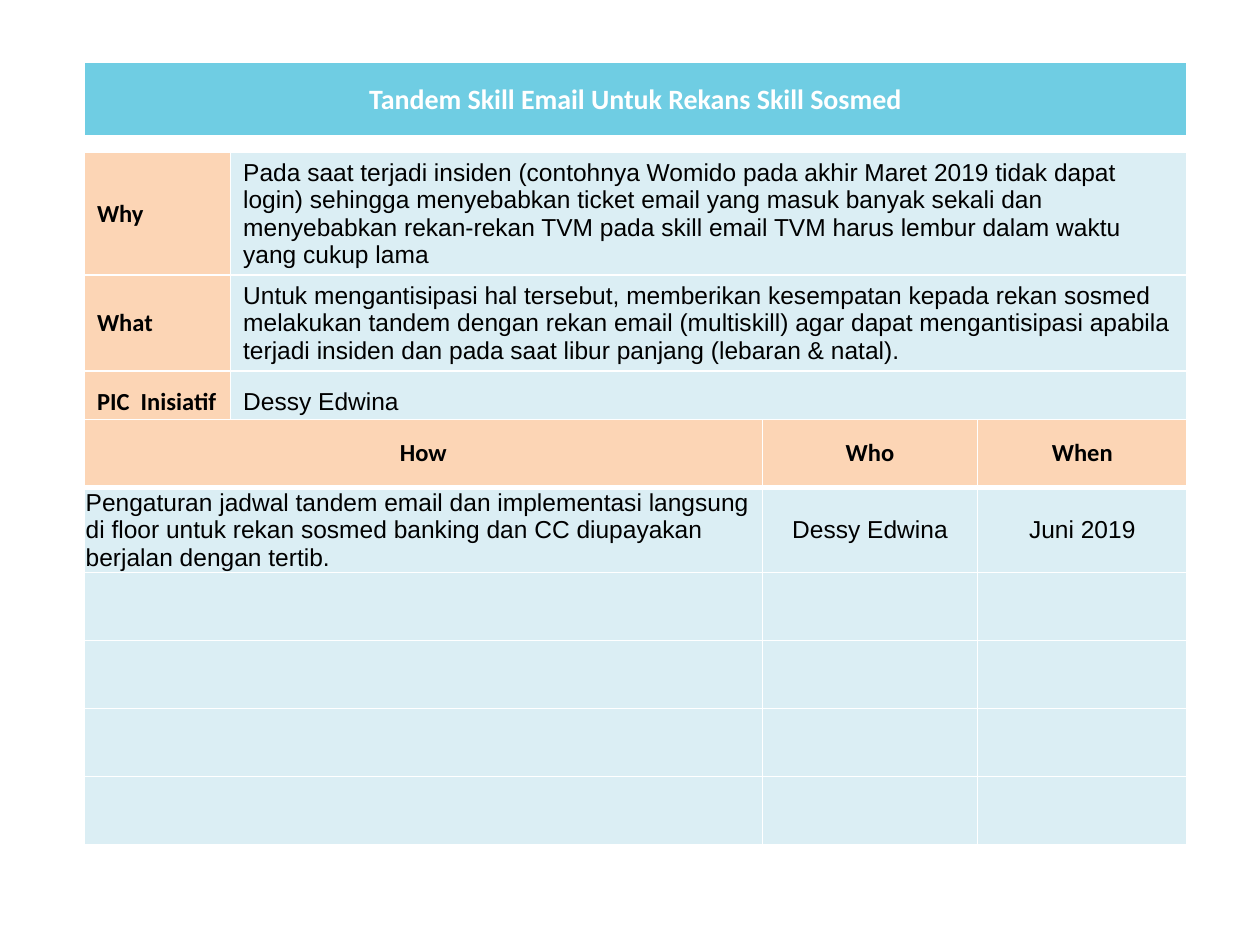
import pptx
import pptx.util
import pptx.dml.color
import pptx.enum.text
import pptx.oxml.ns
from lxml import etree

INCH = pptx.util.Inches
ALIGN = pptx.enum.text.PP_ALIGN
LEFT, WIDTH = 0.67, 8.75
CYAN, PEACH, PALE, WHITE = "6FCDE3", "FCD5B5", "DBEEF4", "FFFFFF"
HEAD = dict(font="Calibri", bold=True)
MID = dict(align=ALIGN.CENTER)


def color(code):
    return pptx.dml.color.RGBColor.from_string(code)


def child(parent, tag, **attrs):
    return etree.SubElement(parent, pptx.oxml.ns.qn(tag), **attrs)


def border(cell, base=1):
    """Draw white cell sides; base is the bottom width in points."""
    props = cell._tc.get_or_add_tcPr()
    for side, width in (("L", 1), ("R", 1), ("T", 1), ("B", base)):
        line = child(props, f"a:ln{side}", w=str(pptx.util.Pt(width)))
        child(child(line, "a:solidFill"), "a:srgbClr", val=WHITE)


def write(cell, text, size=14, font="Arial", bold=False, ink="000000",
          align=ALIGN.LEFT, inset=None):
    cell.vertical_anchor = pptx.enum.text.MSO_ANCHOR.MIDDLE
    if inset is not None:
        cell.margin_left = cell.margin_right = INCH(inset)
        cell.margin_top = cell.margin_bottom = INCH(inset)
    para = cell.text_frame.paragraphs[0]
    para.alignment = align
    if not text:
        child(para._p, "a:endParaRPr", sz=str(size * 100))
        return
    run = para.add_run()
    run.text = text
    run.font.size = pptx.util.Pt(size)
    run.font.name = font
    run.font.bold = bold
    run.font.color.rgb = color(ink)


def paint(cell, fill, text="", base=1, **style):
    border(cell, base)
    cell.fill.solid()
    cell.fill.fore_color.rgb = color(fill)
    write(cell, text, **style)


def grid(slide, top, cols, rows):
    frame = slide.shapes.add_table(len(rows), len(cols), INCH(LEFT), INCH(top),
                                   INCH(WIDTH), INCH(sum(rows)))
    table = frame.table
    table.first_row = table.horz_banding = False
    for col, width in zip(table.columns, cols):
        col.width = INCH(width)
    for row, height in zip(table.rows, rows):
        row.height = INCH(height)
    return table


def brief(slide):
    table = grid(slide, 0.49, (1.16, WIDTH - 1.16), (0.6, 0.12, 0.97, 0.76, 0.5))
    table.cell(0, 0).merge(table.cell(0, 1))
    paint(table.cell(0, 0), CYAN, "Tandem Skill Email Untuk Rekans Skill Sosmed",
          base=3, size=16, ink=WHITE, **HEAD, **MID)
    for col in range(2):
        paint(table.cell(1, col), WHITE, size=1, inset=0)
    facts = (
        ("Why", "Pada saat terjadi insiden (contohnya Womido pada akhir Maret 2019 "
                "tidak dapat login) sehingga menyebabkan ticket email yang masuk banyak "
                "sekali dan menyebabkan rekan-rekan TVM pada skill email TVM harus "
                "lembur dalam waktu yang cukup lama"),
        ("What", "Untuk mengantisipasi hal tersebut, memberikan kesempatan kepada rekan "
                 "sosmed melakukan tandem dengan rekan email (multiskill) agar dapat "
                 "mengantisipasi apabila terjadi insiden dan pada saat libur panjang "
                 "(lebaran & natal)."),
        ("PIC  Inisiatif", "Dessy Edwina"),
    )
    for row, (label, text) in enumerate(facts, 2):
        paint(table.cell(row, 0), PEACH, label, **HEAD)
        paint(table.cell(row, 1), PALE, text)


def plan(slide):
    table = grid(slide, 3.33, (5.38, 1.71, 1.66), (0.54, 0.66) + (0.54,) * 4)
    for col, label in enumerate(("How", "Who", "When")):
        paint(table.cell(0, col), PEACH, label, base=3, **HEAD, **MID)
    step = ("Pengaturan jadwal tandem email dan implementasi langsung di floor untuk "
            "rekan sosmed banking dan CC diupayakan berjalan dengan tertib.")
    paint(table.cell(1, 0), PALE, step, inset=0.01)
    paint(table.cell(1, 1), PALE, "Dessy Edwina", **MID)
    paint(table.cell(1, 2), PALE, "Juni 2019", **MID)
    for row in range(2, 6):
        for col in range(3):
            paint(table.cell(row, col), PALE)


def main():
    deck = pptx.Presentation()
    deck.slide_width, deck.slide_height = INCH(10), INCH(7.5)
    slide = deck.slides.add_slide(deck.slide_layouts[6])
    brief(slide)
    plan(slide)
    deck.save("out.pptx")


if __name__ == "__main__":
    main()
